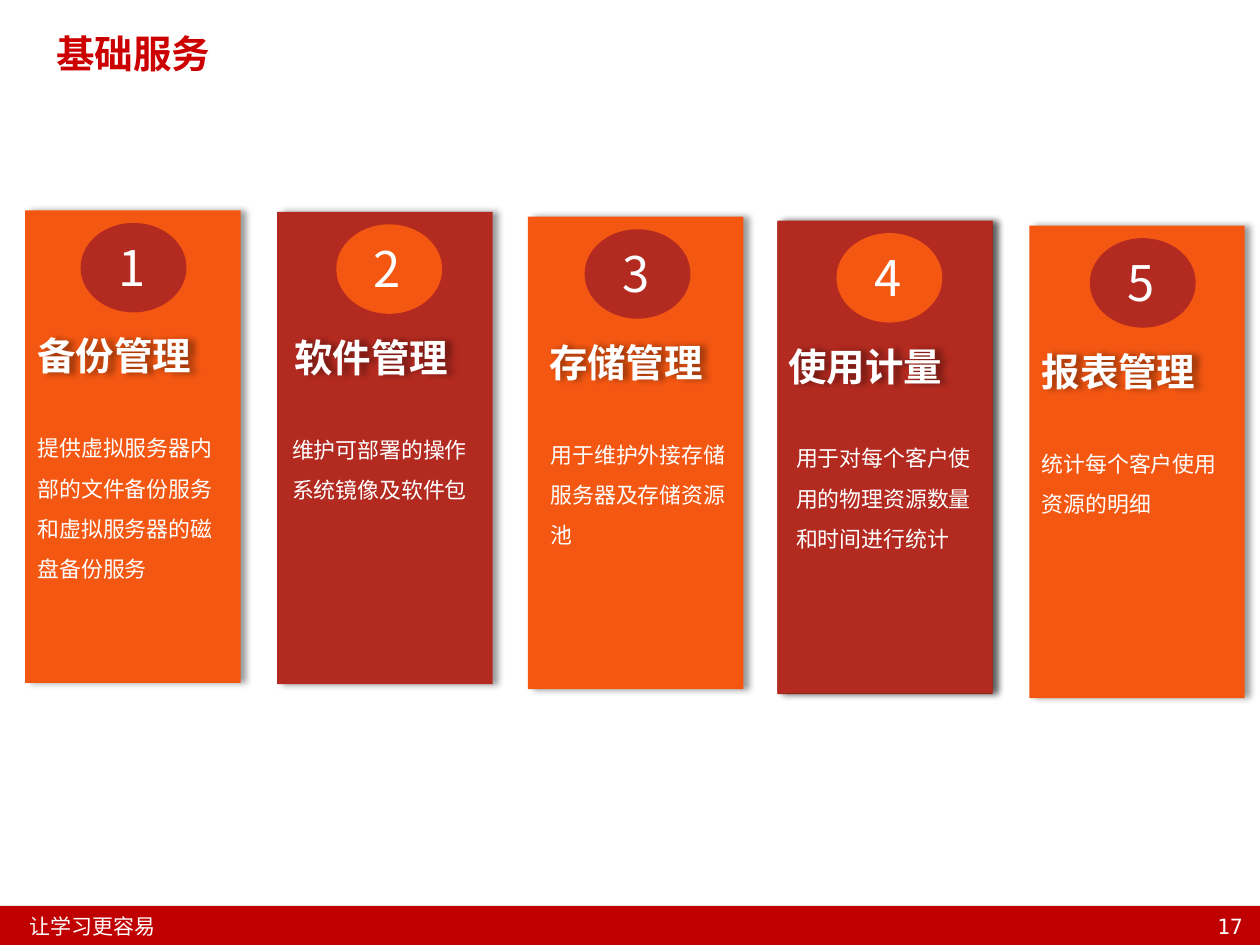
from lxml.etree import SubElement
from pptx import Presentation
from pptx.dml.color import RGBColor
from pptx.enum.shapes import MSO_SHAPE
from pptx.enum.text import MSO_AUTO_SIZE, PP_ALIGN
from pptx.oxml import parse_xml
from pptx.oxml.ns import nsdecls, qn
from pptx.util import Pt

ORANGE = RGBColor(0xF4, 0x57, 0x12)
BRICK = RGBColor(0xB3, 0x2A, 0x20)
FOOTER_RED = RGBColor(0xC0, 0x00, 0x00)
TITLE_RED = RGBColor(0xCC, 0x00, 0x00)
WHITE = RGBColor(0xFF, 0xFF, 0xFF)
CJK = "Noto Sans CJK SC"
CARD_WIDTH, CARD_HEIGHT = 123.1, 270
BADGE_WIDTH, BADGE_HEIGHT = 60.5, 51.1

SERVICES = [
    # left, top, badge dx, heading dx, body dx, heading, body
    (14.4, 120.2, 31.7, 0, 0, "备份管理", "提供虚拟服务器内部的文件备份服务和虚拟服务器的磁盘备份服务"),
    (158.4, 121, 33.8, 2.9, 1.4, "软件管理", "维护可部署的操作系统镜像及软件包"),
    (301.7, 123.8, 32.4, 5, 5.8, "存储管理", "用于维护外接存储服务器及存储资源池"),
    (444.2, 126, 33.8, -0.7, 3.6, "使用计量", "用于对每个客户使用的物理资源数量和时间进行统计"),
    (588.2, 128.9, 34.6, 0, 0, "报表管理", "统计每个客户使用资源的明细"),
]


def add_shadow(shape):
    shape._element.spPr.append(parse_xml(
        f'<a:effectLst {nsdecls("a")}>'
        f'<a:outerShdw blurRad="{Pt(4)}" dist="{Pt(3)}" dir="0" algn="tl" rotWithShape="0">'
        '<a:srgbClr val="000000"><a:alpha val="40000"/></a:srgbClr>'
        '</a:outerShdw></a:effectLst>'))


def add_block(slide, kind, left, top, width, height, color, shadowed=False):
    block = slide.shapes.add_shape(kind, Pt(left), Pt(top), Pt(width), Pt(height))
    block.fill.solid()
    block.fill.fore_color.rgb = color
    block.line.fill.background()
    if shadowed:
        add_shadow(block)
    else:
        block.shadow.inherit = False


def add_label(slide, text, left, top, width, height, size, color=WHITE, font=CJK,
              bold=False, align=PP_ALIGN.LEFT, spacing=None, wrap=True):
    label = slide.shapes.add_textbox(Pt(left), Pt(top), Pt(width), Pt(height))
    frame = label.text_frame
    frame.text = text
    frame.word_wrap = wrap
    frame.auto_size = MSO_AUTO_SIZE.NONE
    paragraph = frame.paragraphs[0]
    paragraph.alignment = align
    if spacing:
        paragraph.line_spacing = Pt(spacing)
    run = paragraph.runs[0]
    run.font.name = font
    run.font.size = Pt(size)
    run.font.bold = bold
    run.font.color.rgb = color
    SubElement(run.font._element, qn("a:ea")).set("typeface", font)
    return label


def add_service(slide, number, service):
    left, top, badge_dx, heading_dx, body_dx, heading, body = service
    card_color, badge_color = (ORANGE, BRICK) if number % 2 else (BRICK, ORANGE)
    add_block(slide, MSO_SHAPE.RECTANGLE, left, top, CARD_WIDTH, CARD_HEIGHT,
              card_color, shadowed=True)
    badge_left, badge_top = left + badge_dx, top + 7.2
    add_block(slide, MSO_SHAPE.OVAL, badge_left, badge_top, BADGE_WIDTH, BADGE_HEIGHT, badge_color)
    add_label(slide, str(number), badge_left + 14.4, badge_top + 4.6, 32.4, 41, 28, wrap=False)
    title = add_label(slide, heading, left + heading_dx, top + 66.2, 116, 34, 22, bold=True)
    add_shadow(title)
    add_label(slide, body, left + body_dx, top + 116.8, CARD_WIDTH, 96, 12.5, spacing=23)


def add_footer(slide):
    add_block(slide, MSO_SHAPE.RECTANGLE, 0, 517.7, 720, 22.3, FOOTER_RED)
    add_label(slide, "让学习更容易", 10, 518.4, 124, 21.6, 12, font="Arial")
    add_label(slide, "17", 675.4, 518.4, 41.8, 21.6, 12, font="DejaVu Sans Mono",
              align=PP_ALIGN.RIGHT)


def main():
    deck = Presentation()
    deck.slide_width, deck.slide_height = Pt(720), Pt(540)
    slide = deck.slides.add_slide(deck.slide_layouts[6])
    add_footer(slide)
    add_label(slide, "基础服务", 25.2, 13.7, 570, 48, 22, TITLE_RED, bold=True)
    backing_left, backing_top = SERVICES[3][:2]
    add_block(slide, MSO_SHAPE.RECTANGLE, backing_left, backing_top + 0.7,
              CARD_WIDTH, CARD_HEIGHT, BRICK, shadowed=True)
    for number, service in enumerate(SERVICES, 1):
        add_service(slide, number, service)
    deck.save("out.pptx")


if __name__ == "__main__":
    main()
